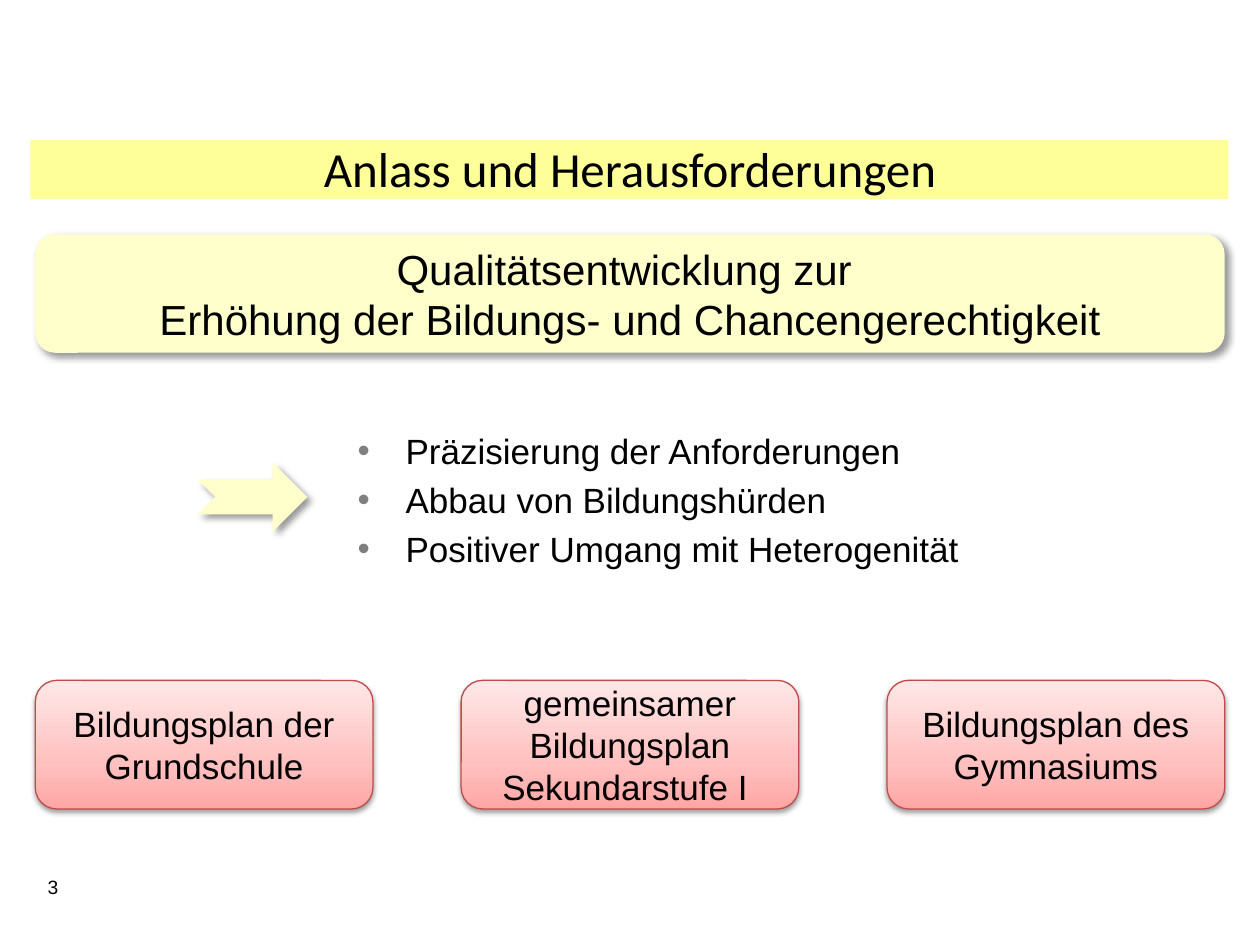
from copy import deepcopy

from pptx import Presentation
from pptx.dml.color import RGBColor
from pptx.enum.shapes import MSO_SHAPE
from pptx.enum.text import MSO_ANCHOR, PP_ALIGN
from pptx.oxml.ns import qn
from pptx.util import Inches, Pt
from lxml.etree import SubElement

COLORS = {
    "text": "000000", "bullet": "7F7F7F", "shadow": "000000",
    "band": "FFFF99", "cream": "FFFFCC", "plan_line": "BF4C48",
    "plan_dark": "FFA6A5", "plan_mid": "FFC0BF", "plan_light": "FFE7E7",
}
PLAN_STOPS = [(0, "plan_dark"), (0.35, "plan_mid"), (1, "plan_light")]
SOFT = {"alpha": 40, "blur": 4, "dist": 3, "angle": 45}
DOWN = {"alpha": 38, "blur": 3.1, "dist": 1.6, "angle": 90}
COLS, ROWS = 100, 75
MARGIN = 2.8
PLAN_WIDTH = 26.8


def rgb(name):
    return RGBColor.from_string(COLORS[name])


class Deck:
    """Holds the style and the current slide; boxes are (col, row, cols, rows)."""

    def __init__(self):
        self.prs = Presentation()
        self.prs.slide_width, self.prs.slide_height = Inches(10), Inches(7.5)
        self.s = self.prs.slides.add_slide(self.prs.slide_layouts[6])
        self.cell_w = self.prs.slide_width / COLS
        self.cell_h = self.prs.slide_height / ROWS

    def place(self, box):
        units = (self.cell_w, self.cell_h) * 2
        return [round(n * unit) for n, unit in zip(box, units)]

    def fill_text(self, sp, lines, size, font="Arial", align=PP_ALIGN.CENTER,
                  anchor=MSO_ANCHOR.TOP, bullets=False):
        tf = sp.text_frame
        tf.word_wrap, tf.vertical_anchor = True, anchor
        for i, line in enumerate(lines):
            p = tf.paragraphs[0] if i == 0 else tf.add_paragraph()
            p.alignment = align
            if bullets:
                self.bullet(p)
                p.space_before = Pt(size * 0.2 if i else 0)
            r = p.add_run()
            r.text = line
            for key, value in {"name": font, "size": Pt(size)}.items():
                setattr(r.font, key, value)
            r.font.color.rgb = rgb("text")

    def bullet(self, p):
        pPr = p._p.get_or_add_pPr()
        for key, value in {"marL": 0.38, "indent": -0.38}.items():
            pPr.set(key, str(Inches(value)))
        color = SubElement(pPr, qn("a:buClr"))
        SubElement(color, qn("a:srgbClr"), val=COLORS["bullet"])
        SubElement(pPr, qn("a:buFont"), typeface="Arial")
        SubElement(pPr, qn("a:buChar"), char="•")

    def text(self, box, lines, size, **style):
        sp = self.s.shapes.add_textbox(*self.place(box))
        self.fill_text(sp, lines, size, **style)

    def shape(self, kind, box, fill=None, shadow=None):
        sp = self.s.shapes.add_shape(kind, *self.place(box))
        sp.shadow.inherit = False
        sp.line.fill.background()
        if fill:
            sp.fill.solid()
            sp.fill.fore_color.rgb = rgb(fill)
        if shadow:
            self.cast(sp, **shadow)
        return sp

    def cast(self, sp, alpha, blur, dist, angle):
        """Give the shape an outer shadow."""
        effects = sp._element.spPr.find(qn("a:effectLst"))
        outer = SubElement(effects, qn("a:outerShdw"), blurRad=str(Pt(blur)),
                           dist=str(Pt(dist)), dir=str(angle * 60000),
                           rotWithShape="0")
        color = SubElement(outer, qn("a:srgbClr"), val=COLORS["shadow"])
        SubElement(color, qn("a:alpha"), val=str(alpha * 1000))

    def panel(self, box, lines, size, **style):
        sp = self.shape(MSO_SHAPE.ROUNDED_RECTANGLE, box, **style)
        self.fill_text(sp, lines, size, anchor=MSO_ANCHOR.MIDDLE)
        return sp

    def plan(self, box, lines):
        """Add a gradient panel that names one curriculum."""
        sp = self.panel(box, lines, 20, shadow=DOWN)
        sp.line.color.rgb = rgb("plan_line")
        sp.line.width = Pt(0.75)
        sp.fill.gradient()
        sp.fill.gradient_angle = 90
        stops = sp._element.spPr.find(qn("a:gradFill")).find(qn("a:gsLst"))
        stops.append(deepcopy(stops[0]))
        for stop, (position, color) in zip(sp.fill.gradient_stops, PLAN_STOPS):
            stop.position = position
            stop.color.rgb = rgb(color)


def main():
    deck = Deck()
    content = COLS - 2 * MARGIN

    deck.shape(MSO_SHAPE.RECTANGLE, (2.4, 11.1, 95.1, 4.7), "band")
    deck.text((0, 10.5, COLS, 5.7), ["Anlass und Herausforderungen"], 28,
              font="Calibri")
    deck.panel((MARGIN, 18.6, content, 9.4),
               ["Qualitätsentwicklung zur ",
                "Erhöhung der Bildungs- und Chancengerechtigkeit"],
               24, fill="cream", shadow=SOFT)

    deck.shape(MSO_SHAPE.NOTCHED_RIGHT_ARROW, (15.7, 36.7, 8.7, 5.5),
               "cream", SOFT)
    deck.text((27.4, 33.6, 66.1, 12.6),
              ["Präzisierung der Anforderungen", "Abbau von Bildungshürden",
               "Positiver Umgang mit Heterogenität"],
              20, align=PP_ALIGN.LEFT, bullets=True)

    plans = [["Bildungsplan der Grundschule"],
             ["gemeinsamer Bildungsplan Sekundarstufe I "],
             ["Bildungsplan des", "Gymnasiums"]]
    step = (content - PLAN_WIDTH) / (len(plans) - 1)
    for i, lines in enumerate(plans):
        deck.plan((MARGIN + i * step, 54, PLAN_WIDTH, 10.2), lines)

    deck.text((MARGIN, 69, 5.5, 2.9), ["3"], 11, align=PP_ALIGN.LEFT)
    deck.prs.save("out.pptx")


if __name__ == "__main__":
    main()
